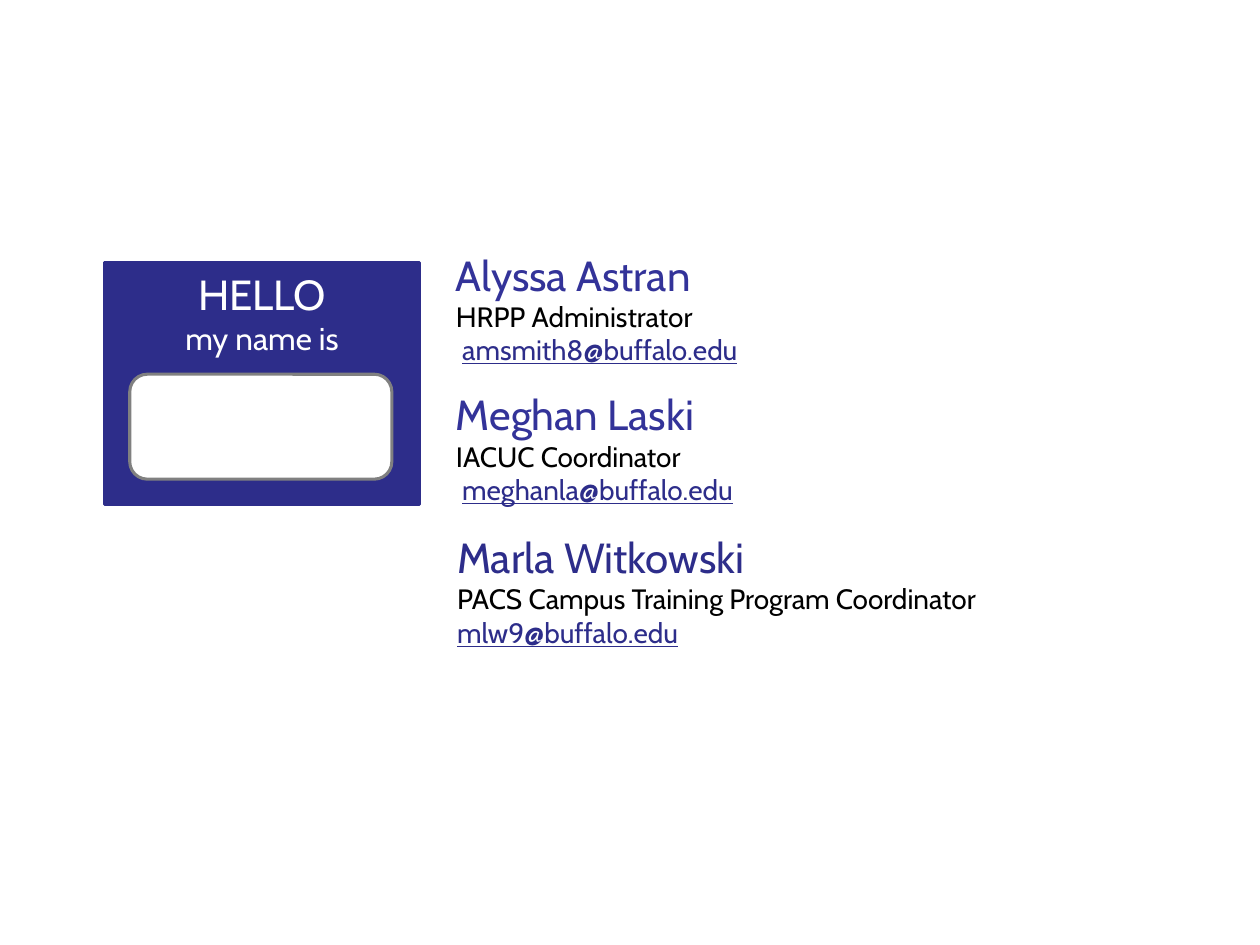
"""Build a contact slide with a name badge and three staff entries."""
from dataclasses import dataclass

from pptx import Presentation
from pptx.dml.color import RGBColor
from pptx.enum.shapes import MSO_SHAPE
from pptx.enum.text import MSO_ANCHOR, PP_ALIGN
from pptx.util import Inches, Pt

RECT, ROUND = MSO_SHAPE.RECTANGLE, MSO_SHAPE.ROUNDED_RECTANGLE
TOP = MSO_ANCHOR.TOP
LEFT, CENTER = PP_ALIGN.LEFT, PP_ALIGN.CENTER
BLANK = 6


@dataclass(frozen=True)
class Theme:
    font: str = "Cabin"
    navy: str = "2D2D8A"
    indigo: str = "333399"
    white: str = "FFFFFF"
    black: str = "000000"
    gray: str = "808080"
    name: int = 24
    greeting: int = 18
    detail: int = 16
    line: float = 1.75


def rgb(value):
    return RGBColor.from_string(value)


def write(p, text, *, font, size, color, align=LEFT, underline=None, indent=0):
    p.alignment = align
    if indent:
        p._p.get_or_add_pPr().set("marL", str(Inches(indent)))
    r = p.add_run()
    r.text = text
    r.font.name, r.font.size = font, Pt(size)
    r.font.color.rgb = rgb(color)
    r.font.underline = underline


class Deck:
    def __init__(self, prs, theme):
        self.prs, self.theme = prs, theme
        self.slide = prs.slides.add_slide(prs.slide_layouts[BLANK])

    def box(self, left, top, width, height):
        w, h = self.prs.slide_width, self.prs.slide_height
        return int(left * w), int(top * h), int(width * w), int(height * h)

    def lines(self, tf, rows):
        tf.word_wrap = True
        tf.vertical_anchor = TOP
        for i, (text, style) in enumerate(rows):
            p = tf.add_paragraph() if i else tf.paragraphs[0]
            write(p, text, font=self.theme.font, **style)

    def panel(self, shapes, kind, at, fill, line):
        sp = shapes.add_shape(kind, *self.box(*at))
        sp.shadow.inherit = False
        sp.fill.solid()
        sp.fill.fore_color.rgb = rgb(fill)
        sp.line.color.rgb = rgb(line)
        sp.line.width = Pt(self.theme.line)
        return sp

    def badge(self, at, label_at):
        t = self.theme
        shapes = self.slide.shapes.add_group_shape().shapes
        sp = self.panel(shapes, RECT, at, t.navy, t.navy)
        style = dict(color=t.white, align=CENTER)
        self.lines(sp.text_frame, [
            ("HELLO", dict(style, size=t.name)),
            ("my name is", dict(style, size=t.greeting)),
        ])
        self.panel(shapes, ROUND, label_at, t.white, t.gray)

    def contact(self, at, name, role, email, color, indent=0):
        t = self.theme
        tf = self.slide.shapes.add_textbox(*self.box(*at)).text_frame
        self.lines(tf, [
            (name, dict(size=t.name, color=color)),
            (role, dict(size=t.detail, color=t.black)),
            (email, dict(size=t.detail, color=t.navy, underline=True, indent=indent)),
        ])


def main():
    prs = Presentation()
    prs.slide_width, prs.slide_height = Inches(10), Inches(7.5)
    t = Theme()
    deck = Deck(prs, t)
    deck.badge((0.083, 0.278, 0.25, 0.256), (0.103, 0.396, 0.208, 0.111))
    height = 0.139
    deck.contact((0.352, 0.257, 0.267, height), "Alyssa Astran",
                 "HRPP Administrator", "amsmith8@buffalo.edu", t.indigo, 0.05)
    deck.contact((0.352, 0.405, 0.258, height), "Meghan Laski",
                 "IACUC Coordinator", "meghanla@buffalo.edu", t.indigo, 0.05)
    deck.contact((0.353, 0.556, 0.454, height), "Marla Witkowski",
                 "PACS Campus Training Program Coordinator", "mlw9@buffalo.edu", t.navy)
    prs.save("out.pptx")


if __name__ == "__main__":
    main()
